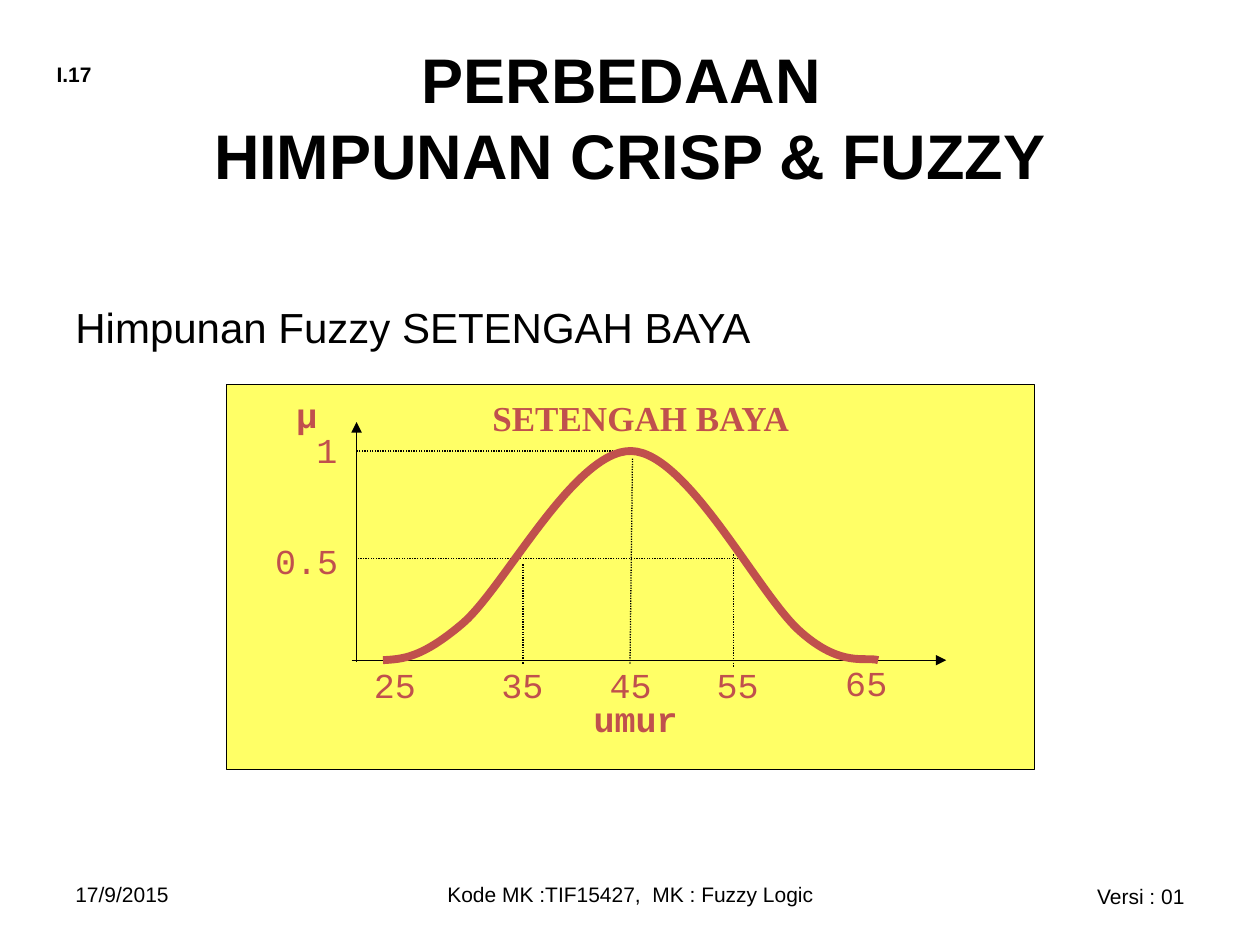
from lxml.etree import SubElement
from pptx import Presentation
from pptx.dml.color import RGBColor
from pptx.enum.dml import MSO_LINE
from pptx.enum.shapes import MSO_CONNECTOR, MSO_SHAPE
from pptx.enum.text import MSO_ANCHOR, PP_ALIGN
from pptx.oxml.ns import qn
from pptx.util import Inches, Pt

BLACK = RGBColor(0x00, 0x00, 0x00)
YELLOW = RGBColor(0xFF, 0xFF, 0x66)
RED = RGBColor(0xC0, 0x50, 0x4D)

LABEL_WIDTH, LABEL_HEIGHT = 1.25, 0.55
AXIS_X, AXIS_Y = 2.83, 5.24

# Text, left, top
AGE_LABELS = [
    ("25", 2.51, 5.22),
    ("35", 3.52, 5.22),
    ("45", 4.38, 5.22),
    ("55", 5.23, 5.22),
    ("65", 6.25, 5.2),
]
MEMBERSHIP_LABELS = [("1", 1.97, 3.35), ("0.5", 1.81, 4.23)]

GUIDES = [
    ((4.97, 3.58), (AXIS_X, 3.58)),
    ((5.92, 4.43), (AXIS_X, 4.43)),
    ((5.02, 3.64), (5, 5.27)),
    ((4.15, 4.48), (4.15, 5.27)),
    ((5.82, 4.4), (5.82, 5.3)),
]

# Start point, then two control points and an end point for each segment
BELL_CURVE = [
    (3.04, 5.24),
    (3.19, 5.23), (3.34, 5.23), (3.67, 4.95),
    (4, 4.67), (4.56, 3.57), (5.01, 3.58),
    (5.46, 3.59), (6.03, 4.74), (6.36, 5.02),
    (6.68, 5.3), (6.87, 5.21), (6.97, 5.24),
]


def add_text(page, text, left, top, width, height, size, font="Arial",
             color=BLACK, bold=False, align=PP_ALIGN.LEFT, anchor=MSO_ANCHOR.TOP):
    box = page.shapes.add_textbox(
        Inches(left), Inches(top), Inches(width), Inches(height))
    box.text_frame.word_wrap = True
    box.text_frame.vertical_anchor = anchor
    para = box.text_frame.paragraphs[0]
    para.text = text
    para.alignment = align
    para.font.name = font
    para.font.size = Pt(size)
    para.font.bold = bold
    para.font.color.rgb = color


def add_label(page, text, left, top, width=LABEL_WIDTH, font="Courier New", bold=False):
    add_text(page, text, left, top, width, LABEL_HEIGHT, 20, font, RED, bold,
             PP_ALIGN.CENTER)


def add_line(page, start, end, dotted=False, arrow=False):
    line = page.shapes.add_connector(
        MSO_CONNECTOR.STRAIGHT, *(Inches(value) for value in (*start, *end)))
    line.line.color.rgb = BLACK
    line.line.width = Pt(0.75)
    if dotted:
        line.line.dash_style = MSO_LINE.ROUND_DOT
    if arrow:
        SubElement(line.line._get_or_add_ln(), qn("a:tailEnd"), type="triangle")
    SubElement(line._element.spPr, qn("a:effectLst"))


def add_curve(page, points):
    """Draw a polyline through the control points, then make it cubic Béziers."""
    corners = [(Inches(x), Inches(y)) for x, y in points]
    builder = page.shapes.build_freeform(*corners[0])
    builder.add_line_segments(corners[1:], close=False)
    curve = builder.convert_to_shape()
    steps = list(curve._element.iter(qn("a:lnTo")))
    outline = steps[0].getparent()
    for first in range(0, len(steps), 3):
        bezier = SubElement(outline, qn("a:cubicBezTo"))
        for step in steps[first:first + 3]:
            bezier.append(step[0])
            outline.remove(step)
    curve.shadow.inherit = False
    curve.fill.background()
    curve.line.color.rgb = RED
    curve.line.width = Pt(4.5)


def add_panel(page):
    panel = page.shapes.add_shape(
        MSO_SHAPE.RECTANGLE, Inches(1.8), Inches(3.05), Inches(6.41), Inches(3.06))
    panel.shadow.inherit = False
    panel.fill.solid()
    panel.fill.fore_color.rgb = YELLOW
    panel.line.color.rgb = BLACK
    panel.line.width = Pt(0.75)


def add_membership_graph(page):
    add_panel(page)
    add_line(page, (AXIS_X, 5.25), (AXIS_X, 3.35), arrow=True)
    add_line(page, (2.79, AXIS_Y), (7.51, AXIS_Y), arrow=True)
    for start, end in GUIDES:
        add_line(page, start, end, dotted=True)
    for text, left, top in AGE_LABELS + MEMBERSHIP_LABELS:
        add_label(page, text, left, top)
    add_label(page, "umur", 4.42, 5.49, bold=True)
    add_label(page, "μ", 1.81, 3.07, font="Arial", bold=True)
    add_label(page, "SETENGAH BAYA", 3.62, 3.1, 2.93, "Times New Roman", bold=True)
    add_curve(page, BELL_CURVE)


def main():
    deck = Presentation()
    deck.slide_width, deck.slide_height = Inches(10), Inches(7.5)
    page = deck.slides.add_slide(deck.slide_layouts[6])

    add_text(page, "I.17", 0.35, 0.44, 1.81, 0.3, 12, bold=True)
    add_text(page, "PERBEDAAN \vHIMPUNAN CRISP & FUZZY", 0.5, 0.3, 9, 1.25, 36,
             bold=True, align=PP_ALIGN.CENTER, anchor=MSO_ANCHOR.MIDDLE)
    add_text(page, "Himpunan Fuzzy SETENGAH BAYA", 0.5, 2.34, 9, 4.61, 24)
    add_membership_graph(page)

    add_text(page, "17/9/2015", 0.5, 6.95, 2.33, 0.4, 12)
    add_text(page, "Kode MK :TIF15427,  MK : Fuzzy Logic", 3.42, 6.95, 3.17, 0.4, 12,
             align=PP_ALIGN.CENTER)
    add_text(page, "Versi : 01", 7.17, 6.96, 2.33, 0.3, 12, align=PP_ALIGN.RIGHT)

    deck.save("out.pptx")


if __name__ == "__main__":
    main()
